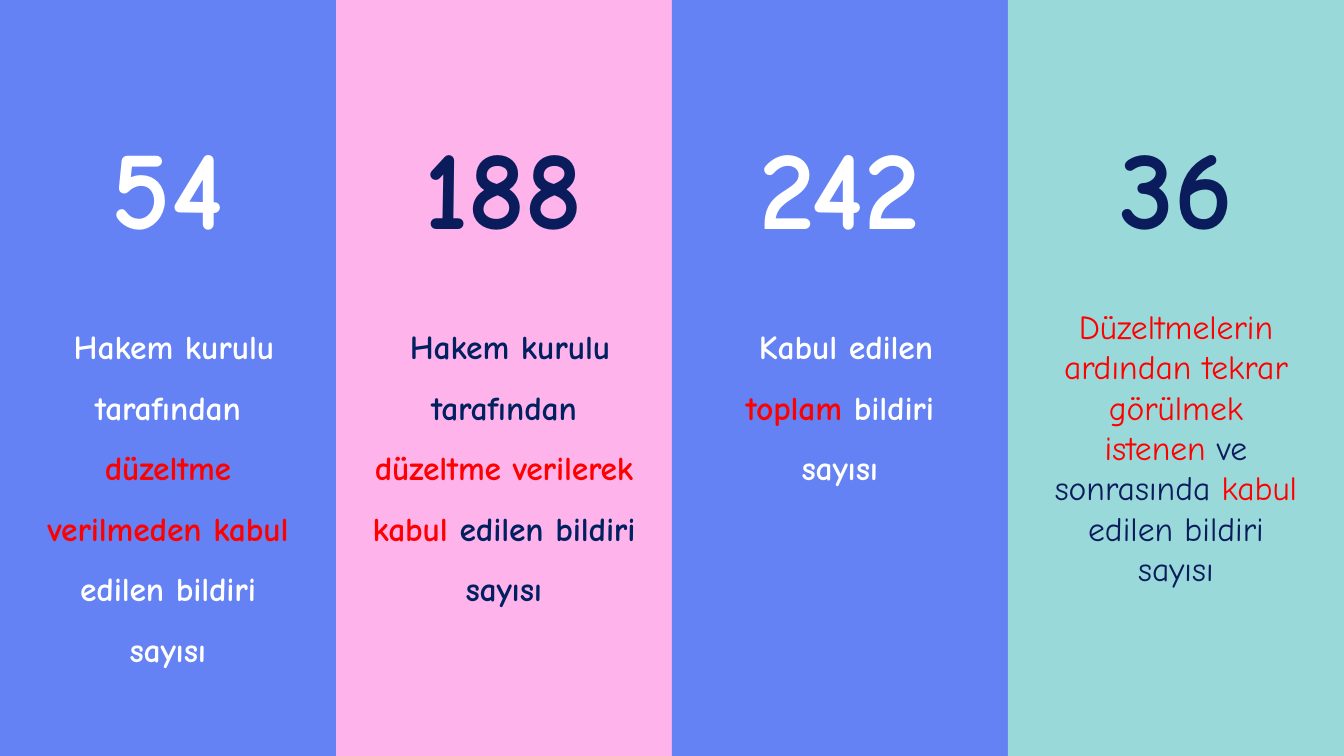
"""Build a slide of four coloured columns, each with a paper count and its caption."""
from pptx import Presentation
from pptx.dml.color import RGBColor
from pptx.enum.shapes import MSO_SHAPE as Shape
from pptx.enum.text import MSO_AUTO_SIZE as AutoSize, PP_ALIGN as Align
from pptx.util import Pt

PX = 12192000 / 1344
WIDTH, HEIGHT = 1344, 756
COLORS = {
    "blue": "6482F4",
    "pink": "FEB3EB",
    "teal": "99D9D9",
    "white": "FFFFFF",
    "ink": "0B1C5D",
    "navy": "002060",
    "red": "FF0000",
}
COLUMNS = [
    ("blue", "54", "white", 46, 305, 1.5, True, [
        (" Hakem kurulu tarafından ", "white"),
        ("düzeltme verilmeden kabul ", "red"),
        ("edilen bildiri sayısı", "white")]),
    ("pink", "188", "ink", 32, 305, 1.5, True, [
        (" Hakem kurulu tarafından ", "navy"),
        ("düzeltme verilerek kabul ", "red"),
        ("edilen bildiri sayısı", "navy")]),
    ("blue", "242", "white", 46, 183, 1.5, True, [
        (" Kabul edilen ", "white"),
        ("toplam ", "red"),
        ("bildiri sayısı", "white")]),
    ("teal", "36", "ink", 46, 244, 1, False, [
        ("Düzeltmelerin ardından tekrar görülmek istenen ", "red"),
        ("ve sonrasında ", "ink"),
        ("kabul", "red"),
        (" edilen bildiri sayısı", "ink")]),
]


def px(length):
    return round(length * PX)


def add_text(spans, left, top, width, height, size, bold, line_spacing=1, tracking=0):
    box = page.shapes.add_textbox(px(left), px(top), px(width), px(height))
    frame = box.text_frame
    frame.word_wrap = True
    frame.auto_size = AutoSize.SHAPE_TO_FIT_TEXT
    frame.margin_left = frame.margin_right = 0
    frame.margin_top = frame.margin_bottom = 0
    para = frame.paragraphs[0]
    para.alignment = Align.CENTER
    para.line_spacing = float(line_spacing)
    for text, color in spans:
        span = para.add_run()
        span.text = text
        span.font.name = "Comic Neue"
        span.font.size = Pt(size)
        span.font.bold = bold
        span.font.color.rgb = RGBColor.from_string(COLORS[color])
        if tracking:
            span.font._element.set("spc", str(tracking))


deck = Presentation()
deck.slide_width, deck.slide_height = px(WIDTH), px(HEIGHT)
page = deck.slides.add_slide(deck.slide_layouts[6])
column_width = WIDTH // len(COLUMNS)

for index, (fill, *_) in enumerate(COLUMNS):
    panel = page.shapes.add_shape(
        Shape.RECTANGLE, px(index * column_width), 0, px(column_width), px(HEIGHT))
    panel.shadow.inherit = False
    panel.fill.solid()
    panel.fill.fore_color.rgb = RGBColor.from_string(COLORS[fill])
    panel.line.fill.background()

for index, (_, count, color, inset, height, spacing, bold, caption) in enumerate(COLUMNS):
    left = index * column_width
    add_text([(count, color)], left + 46, 118, column_width - 92, 136, size=80, bold=True)
    add_text(caption, left + inset, 306, column_width - 2 * inset, height, size=24,
             bold=bold, line_spacing=spacing, tracking=-10 if bold else 0)

deck.save("out.pptx")
